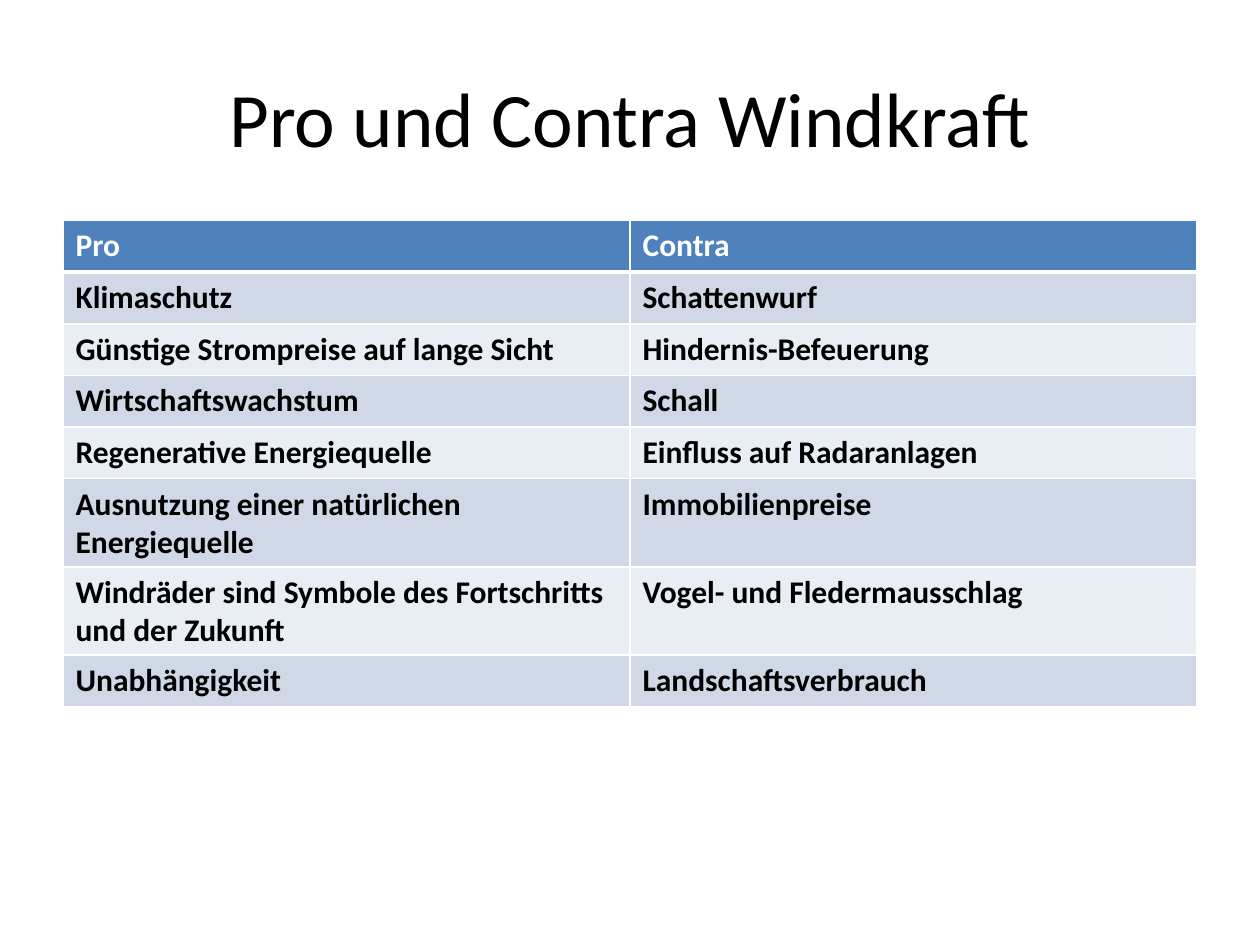
from lxml.etree import SubElement
from pptx import Presentation
from pptx.dml.color import RGBColor
from pptx.enum.text import MSO_ANCHOR, PP_ALIGN
from pptx.oxml.ns import qn
from pptx.util import Inches, Pt

COLORS = {
    "text": "000000",
    "white": "FFFFFF",
    "head": "4F81BD",
    "dark": "D0D8E8",
    "light": "E9EDF4",
}

ROWS = [
    ("Pro", "Contra"),
    ("Klimaschutz", "Schattenwurf"),
    ("Günstige Strompreise auf lange Sicht", "Hindernis-Befeuerung"),
    ("Wirtschaftswachstum", "Schall"),
    ("Regenerative Energiequelle", "Einfluss auf Radaranlagen"),
    ("Ausnutzung einer natürlichen Energiequelle", "Immobilienpreise"),
    ("Windräder sind Symbole des Fortschritts und der Zukunft",
     "Vogel- und Fledermausschlag"),
    ("Unabhängigkeit", "Landschaftsverbrauch"),
]


def add_run(para, text, size, color, bold=False):
    run = para.add_run()
    run.text = text
    run.font.name = "Calibri"
    run.font.size = Pt(size)
    run.font.bold = bold
    run.font.color.rgb = RGBColor.from_string(COLORS[color])


def add_edge(cell, side, width):
    """Draw one white cell border; side is L, R, T or B."""
    line = SubElement(cell._tc.get_or_add_tcPr(), qn(f"a:ln{side}"), w=str(Pt(width)))
    fill = SubElement(line, qn("a:solidFill"))
    SubElement(fill, qn("a:srgbClr"), val=COLORS["white"])


prs = Presentation()
prs.slide_width = Inches(10)
prs.slide_height = Inches(7.5)
slide = prs.slides.add_slide(prs.slide_layouts[6])

# Title
title = slide.shapes.add_textbox(Inches(0.5), Inches(0.3), Inches(9), Inches(1.25))
frame = title.text_frame
frame.word_wrap = True
frame.vertical_anchor = MSO_ANCHOR.MIDDLE
frame.paragraphs[0].alignment = PP_ALIGN.CENTER
add_run(frame.paragraphs[0], "Pro und Contra Windkraft", 44, "text")

# Table of arguments
height = Inches(0.41)
table = slide.shapes.add_table(
    len(ROWS), 2, Inches(0.5), Inches(1.75), Inches(9), height * len(ROWS)
).table

for r, texts in enumerate(ROWS):
    table.rows[r].height = height
    band = "head" if r == 0 else ("light", "dark")[r % 2]
    for c, text in enumerate(texts):
        cell = table.cell(r, c)
        for side in "LRTB":
            thick = (r == 0 and side == "B") or (r == 1 and side == "T")
            add_edge(cell, side, 3 if thick else 1)
        cell.fill.solid()
        cell.fill.fore_color.rgb = RGBColor.from_string(COLORS[band])
        add_run(cell.text_frame.paragraphs[0], text, 18,
                "white" if r == 0 else "text", bold=True)

prs.save("out.pptx")
